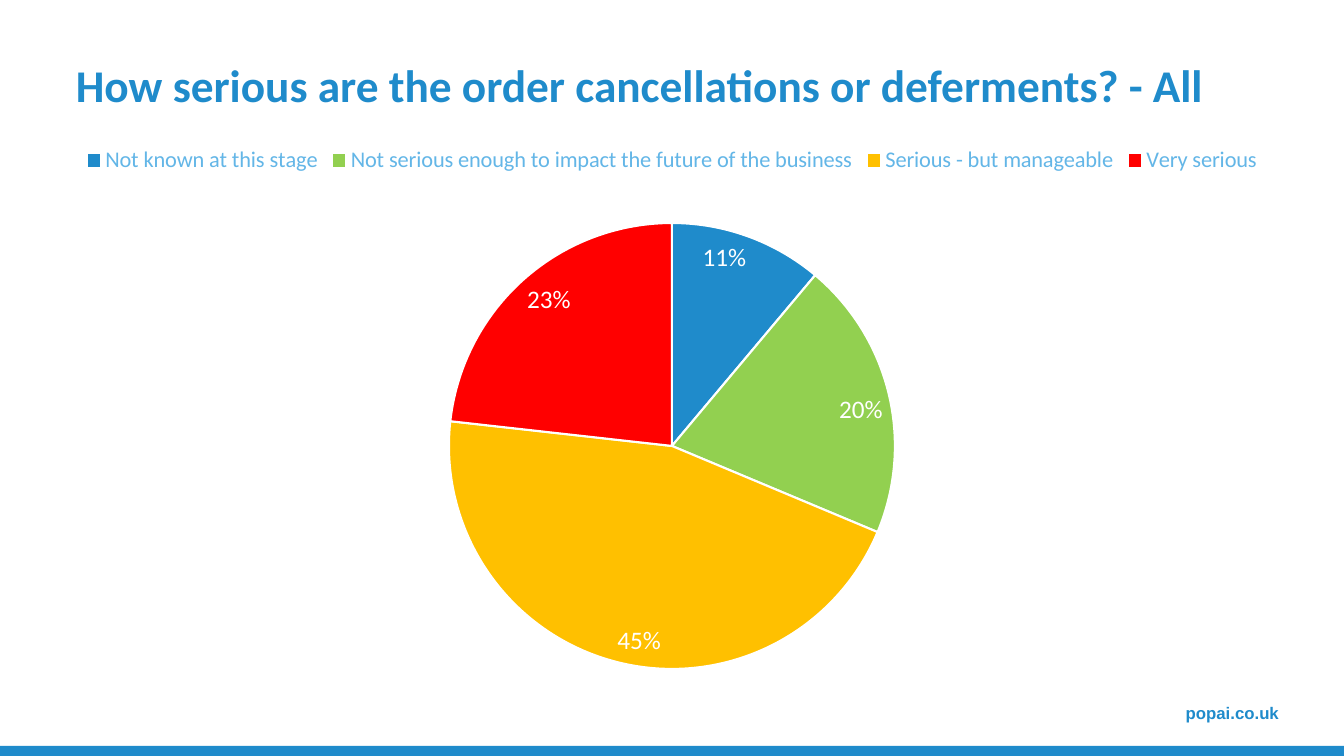
import pptx
import pptx.util
import pptx.chart.data
import pptx.dml.color
import pptx.enum.chart
import pptx.enum.shapes
import pptx.enum.text
import pptx.oxml

EMU_PER_PX = 914400 / 100.8
SLIDE_WIDTH, SLIDE_HEIGHT = 1344, 756
COLOURS = {
    "blue": "1F8BCB",
    "light blue": "63B6E7",
    "green": "92D050",
    "amber": "FFC000",
    "red": "FF0000",
    "white": "FFFFFF",
}
# Answer, share in percent, slice colour
ANSWERS = [
    ("Not known at this stage", 11, "blue"),
    ("Not serious enough to impact the future of the business", 20, "green"),
    ("Serious - but manageable", 45, "amber"),
    ("Very serious", 23, "red"),
]
# The frame is wider than the slide so that the legend stays on one line
CHART_BOX = (-1090, 135, 3524, 548)
PIE_BOX = (449, 223, 446, 446)


def px(length):
    return pptx.util.Emu(round(length * EMU_PER_PX))


def colour(name):
    return pptx.dml.color.RGBColor.from_string(COLOURS[name])


def style_font(font, name, size, colour_name, bold=False):
    font.name = name
    font.size = pptx.util.Pt(size)
    font.bold = bold
    font.color.rgb = colour(colour_name)


def add_text(slide, box, text, font_name, size, alignment):
    shape = slide.shapes.add_textbox(*map(px, box))
    frame = shape.text_frame
    frame.word_wrap = True
    frame.vertical_anchor = pptx.enum.text.MSO_ANCHOR.MIDDLE
    paragraph = frame.paragraphs[0]
    paragraph.alignment = alignment
    run = paragraph.add_run()
    run.text = text
    style_font(run.font, font_name, size, "blue", bold=True)


def add_bar(slide, box, colour_name):
    shape = slide.shapes.add_shape(
        pptx.enum.shapes.MSO_SHAPE.RECTANGLE, *map(px, box))
    shape.shadow.inherit = False
    shape.fill.solid()
    shape.fill.fore_color.rgb = colour(colour_name)
    shape.line.fill.background()


def place_pie(chart):
    """Fix the plot area at PIE_BOX, as fractions of the chart frame."""
    left, top, width, height = CHART_BOX
    pie_left, pie_top, pie_width, pie_height = PIE_BOX
    fractions = {
        "x": (pie_left - left) / width,
        "y": (pie_top - top) / height,
        "w": pie_width / width,
        "h": pie_height / height,
    }
    settings = '<c:layoutTarget val="inner"/>'
    settings += "".join(f'<c:{key}Mode val="edge"/>' for key in "xy")
    settings += "".join(
        f'<c:{key} val="{value:.4f}"/>' for key, value in fractions.items())
    layout = pptx.oxml.parse_xml(
        '<c:layout xmlns:c="http://schemas.openxmlformats.org/drawingml/2006/chart">'
        f"<c:manualLayout>{settings}</c:manualLayout></c:layout>")
    plot_area = chart._chartSpace.chart.plotArea
    for old_layout in plot_area.xpath("c:layout"):
        plot_area.remove(old_layout)
    plot_area.insert(0, layout)


def add_pie(slide):
    data = pptx.chart.data.CategoryChartData()
    data.categories = [answer for answer, _, _ in ANSWERS]
    data.add_series("Series 1", [share for _, share, _ in ANSWERS])
    chart = slide.shapes.add_chart(
        pptx.enum.chart.XL_CHART_TYPE.PIE, *map(px, CHART_BOX), data).chart
    chart.has_title = False
    style_font(chart.font, "Calibri", 10, "blue")
    place_pie(chart)

    # Legend
    chart.has_legend = True
    chart.legend.position = pptx.enum.chart.XL_LEGEND_POSITION.TOP
    chart.legend.include_in_layout = False
    style_font(chart.legend.font, "Calibri", 16, "light blue")

    # Slices
    plot = chart.plots[0]
    plot.vary_by_categories = True
    for index, (_, _, colour_name) in enumerate(ANSWERS):
        slice_format = plot.series[0].points[index].format
        slice_format.fill.solid()
        slice_format.fill.fore_color.rgb = colour(colour_name)
        slice_format.line.color.rgb = colour("white")
        slice_format.line.width = pptx.util.Pt(1.5)

    # Percentages
    plot.has_data_labels = True
    labels = plot.data_labels
    labels.show_percentage = True
    labels.show_value = False
    labels.number_format = "0%"
    labels.number_format_is_linked = False
    labels.position = pptx.enum.chart.XL_LABEL_POSITION.INSIDE_END
    style_font(labels.font, "Calibri", 18, "white")


def main():
    presentation = pptx.Presentation()
    presentation.slide_width = px(SLIDE_WIDTH)
    presentation.slide_height = px(SLIDE_HEIGHT)
    slide = presentation.slides.add_slide(presentation.slide_layouts[6])

    # Footer
    add_text(slide, (1025, 698, 264, 30), "popai.co.uk", "Arial", 12,
             pptx.enum.text.PP_ALIGN.RIGHT)
    add_bar(slide, (0, 746, SLIDE_WIDTH, 16), "blue")

    # Title and chart
    add_text(slide, (66, 55, 1210, 58),
             "How serious are the order cancellations or deferments? - All",
             "Calibri", 32.4, pptx.enum.text.PP_ALIGN.LEFT)
    add_pie(slide)

    presentation.save("out.pptx")


if __name__ == "__main__":
    main()
